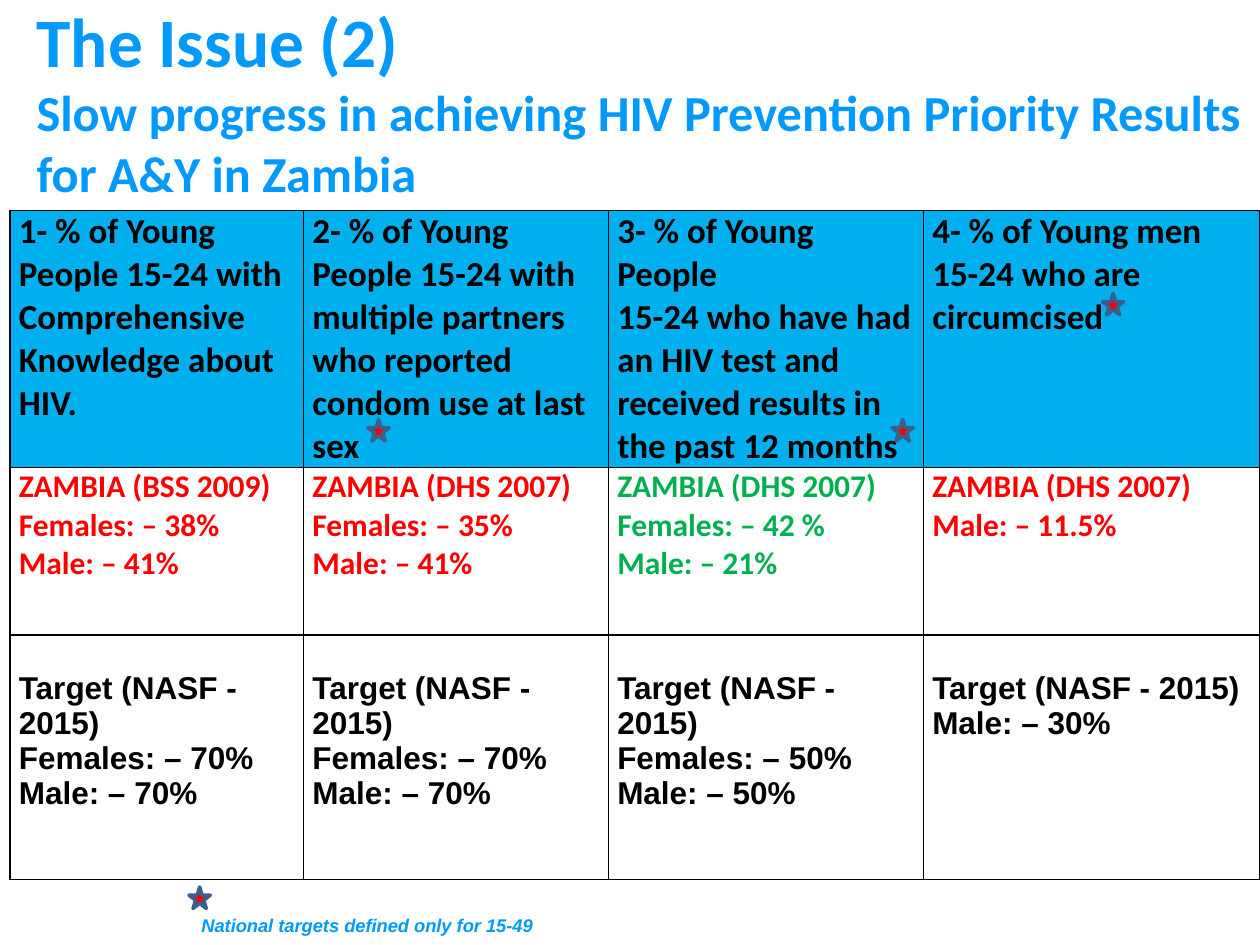
from lxml import etree
from pptx import Presentation
from pptx import util as u
from pptx.dml.color import RGBColor
from pptx.enum import shapes, text
from pptx.oxml.ns import qn

COLORS = {
    "title": "0099FF", "header": "00B0EE", "black": "000000",
    "red": "FF0000", "green": "00B050", "star_line": "3A5F8C",
}
COL_WIDTHS = [2.33, 2.42, 2.5, 2.67]
ROW_HEIGHTS = [2.04, 1.33, 1.94]
HEADERS = [
    ["1- % of Young People 15-24 with Comprehensive Knowledge about HIV."],
    ["2- % of Young People 15-24 with multiple partners who reported "
     "condom use at last sex"],
    ["3- % of Young People",
     "15-24 who have had an HIV test and received results in the past 12 months"],
    ["4- % of Young men", "15-24 who are circumcised"],
]
RESULTS = [
    ["ZAMBIA (BSS 2009)", "Females: – 38%", "Male: – 41%"],
    ["ZAMBIA (DHS 2007)", "Females: – 35%", "Male: – 41%"],
    ["ZAMBIA (DHS 2007)", "Females: – 42 %", "Male: – 21%"],
    ["ZAMBIA (DHS 2007)", "Male: – 11.5%"],
]
RESULT_COLORS = ["red", "red", "green", "red"]
TARGETS = [
    ["Females: – 70%", "Male: – 70%"],
    ["Females: – 70%", "Male: – 70%"],
    ["Females: – 50%", "Male: – 50%"],
    ["Male: – 30%"],
]
STARS = [(2.92, 3.33), (1.5, 7.04), (8.75, 2.33), (7.08, 3.33)]


def rgb(name):
    return RGBColor.from_string(COLORS[name])


def add_run(p, words, size, color, font="Calibri", italic=False):
    r = p.add_run()
    r.text = words
    f = r.font
    f.name, f.size, f.bold, f.italic = font, u.Pt(size), True, italic
    f.color.rgb = rgb(color)


def set_title(slide):
    sp = slide.shapes.title
    sp.left, sp.top = u.Inches(0.19), u.Inches(0.17)
    sp.width, sp.height = u.Inches(9.83), u.Inches(1.25)
    tf = sp.text_frame
    tf.auto_size = text.MSO_AUTO_SIZE.NONE
    tf.vertical_anchor = text.MSO_ANCHOR.MIDDLE
    p = tf.paragraphs[0]
    p.alignment = text.PP_ALIGN.LEFT
    add_run(p, "The Issue (2)", 39.6, "title")
    p.add_line_break()
    add_run(p, "Slow progress in achieving HIV Prevention Priority Results "
               "for A&Y in Zambia", 28.8, "title")


def add_borders(cell):
    tc_pr = cell._tc.get_or_add_tcPr()
    for side in ("a:lnL", "a:lnR", "a:lnT", "a:lnB"):
        ln = etree.SubElement(tc_pr, qn(side), w=str(u.Pt(1)))
        fill = etree.SubElement(ln, qn("a:solidFill"))
        etree.SubElement(fill, qn("a:srgbClr"), val=COLORS["black"])


def fill_cell(cell, lines, size, color, font="Calibri", fill=None, top=0):
    cell.margin_left = cell.margin_right = u.Inches(0.07)
    cell.margin_top, cell.margin_bottom = u.Inches(top), 0
    add_borders(cell)
    if fill:
        cell.fill.solid()
        cell.fill.fore_color.rgb = rgb(fill)
    else:
        cell.fill.background()
    tf = cell.text_frame
    for i, line in enumerate(lines):
        p = tf.add_paragraph() if i else tf.paragraphs[0]
        add_run(p, line, size, color, font)


def add_results_table(slide):
    table = slide.shapes.add_table(
        len(ROW_HEIGHTS), len(COL_WIDTHS), u.Inches(0.08), u.Inches(1.67),
        u.Inches(sum(COL_WIDTHS)), u.Inches(sum(ROW_HEIGHTS))).table
    table.first_row = table.horz_banding = False
    for row, height in zip(table.rows, ROW_HEIGHTS):
        row.height = u.Inches(height)
    for i, width in enumerate(COL_WIDTHS):
        table.columns[i].width = u.Inches(width)
        fill_cell(table.cell(0, i), HEADERS[i], 20, "black", fill="header")
        fill_cell(table.cell(1, i), RESULTS[i], 18, RESULT_COLORS[i])
        fill_cell(table.cell(2, i), ["Target (NASF - 2015)"] + TARGETS[i],
                  18, "black", font="Arial", top=0.28)


def add_star(slide, x, y):
    s = slide.shapes.add_shape(shapes.MSO_SHAPE.STAR_5_POINT, u.Inches(x),
                               u.Inches(y), u.Inches(0.17), u.Inches(0.17))
    s.shadow.inherit = False
    s.fill.solid()
    s.fill.fore_color.rgb = rgb("red")
    s.line.color.rgb = rgb("star_line")
    s.line.width = u.Pt(2)


def add_footnote(slide):
    tf = slide.shapes.add_textbox(u.Inches(1.5), u.Inches(7.21),
                                  u.Inches(2.92), u.Inches(0.28)).text_frame
    tf.word_wrap = True
    tf.auto_size = text.MSO_AUTO_SIZE.SHAPE_TO_FIT_TEXT
    add_run(tf.paragraphs[0], "National targets defined only for 15-49",
            10.5, "title", "Arial", italic=True)


def main():
    prs = Presentation()
    prs.slide_width, prs.slide_height = u.Inches(10), u.Inches(7.5)
    slide = prs.slides.add_slide(prs.slide_layouts[5])
    set_title(slide)
    add_results_table(slide)
    for x, y in STARS:
        add_star(slide, x, y)
    add_footnote(slide)
    prs.save("out.pptx")


if __name__ == "__main__":
    main()
